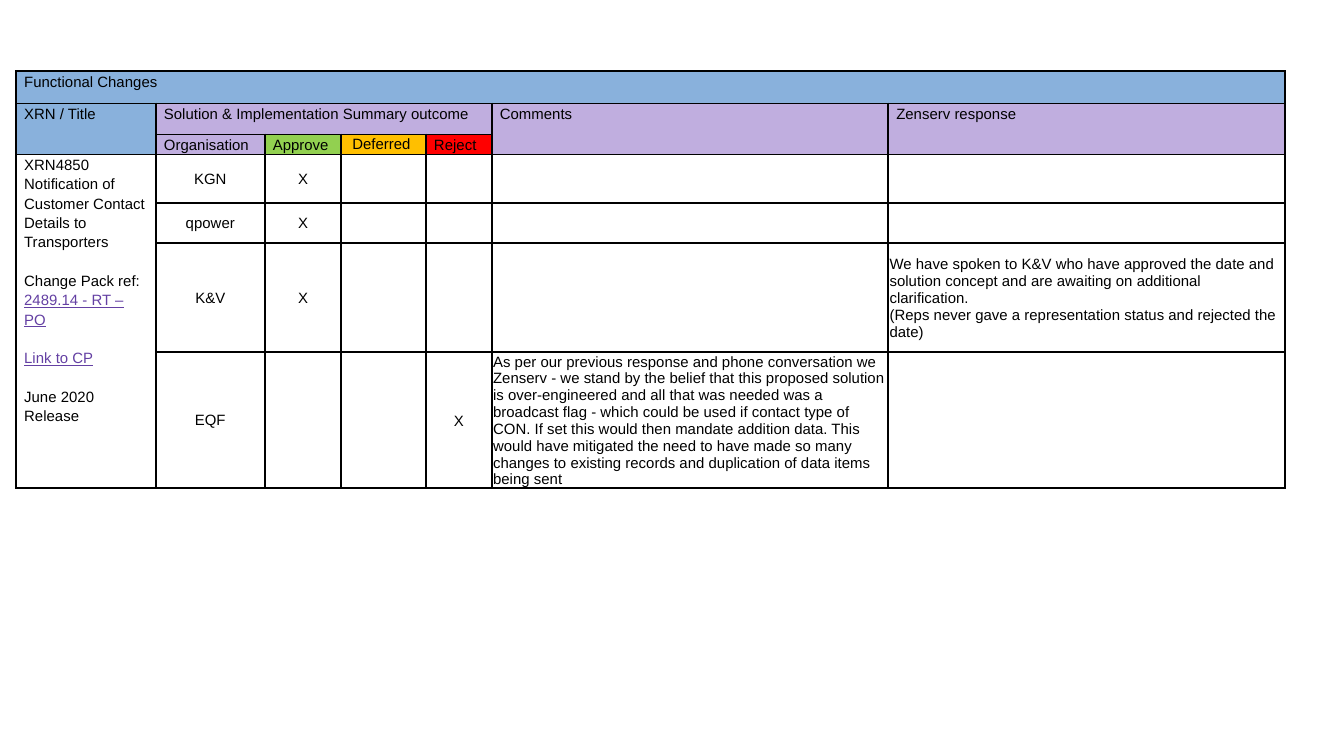
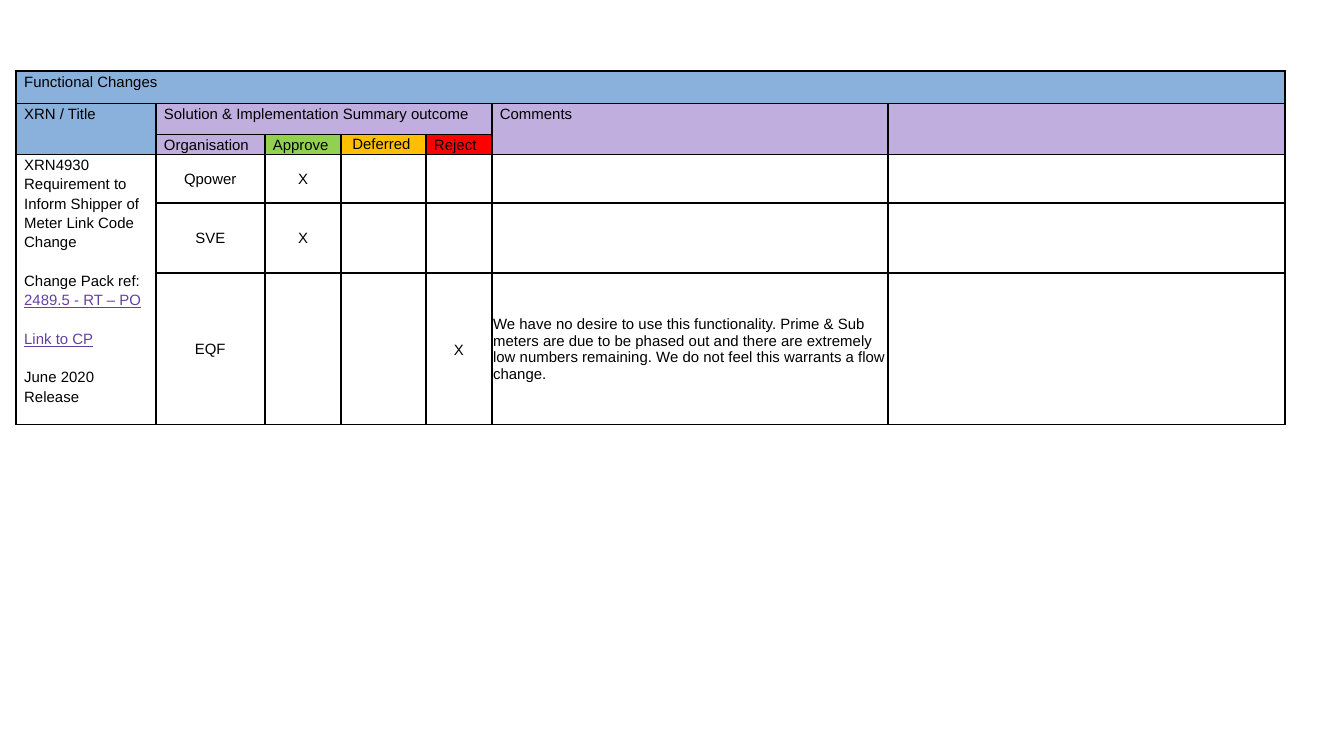
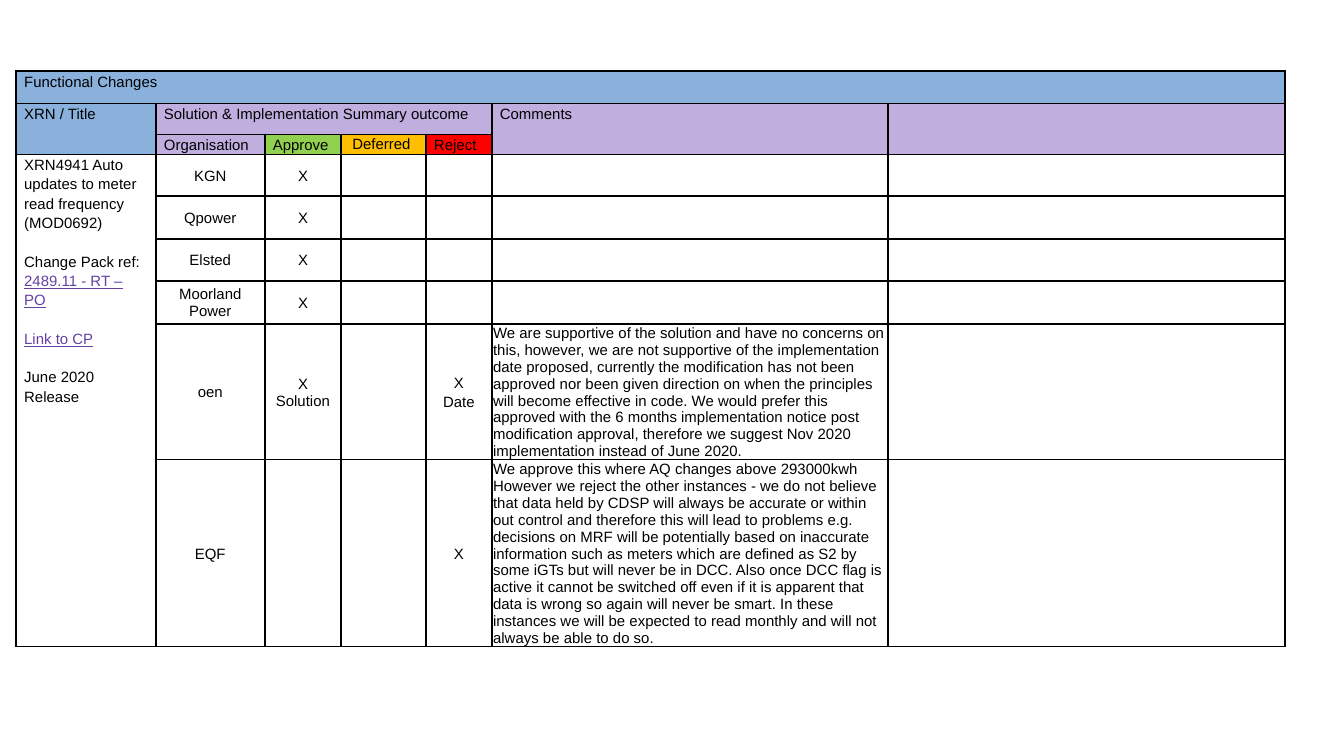
from dataclasses import dataclass
from typing import NamedTuple

from lxml import etree
from pptx import Presentation
from pptx.dml.color import RGBColor
from pptx.enum.text import MSO_ANCHOR, PP_ALIGN
from pptx.oxml.ns import qn
from pptx.util import Inches, Pt

LEFT, CENTER = PP_ALIGN.LEFT, PP_ALIGN.CENTER
TOP, MIDDLE = MSO_ANCHOR.TOP, MSO_ANCHOR.MIDDLE

SLIDE_WIDTH = 10
SLIDE_HEIGHT = SLIDE_WIDTH * 9 / 16
TABLE_LEFT, TABLE_TOP = 0.12, 0.53
COLUMN_WIDTHS = [1.04, 0.81, 0.57, 0.63, 0.49, 2.95, 2.95]
HEADER_HEIGHTS = [0.24, 0.23, 0.15]
FIRST_VOTE_ROW = len(HEADER_HEIGHTS)

BLACK, WHITE = "000000", "FFFFFF"
BLUE, PURPLE = "89B1DC", "C0AEDF"
GREEN, AMBER, RED = "92D050", "FFBF00", "FF0000"
LINK_COLOR = "6440A3"
FONT_NAME, FONT_SIZE = "Arial", 8
BORDER_WIDTH = 1
BLANK_LINE = 10.3


class CellStyle(NamedTuple):
    align: PP_ALIGN
    anchor: MSO_ANCHOR
    side_inset: float
    top_inset: float
    line_spacing: float


HEADING = CellStyle(LEFT, TOP, 0.06, 0, 1.15)
DEFERRED_HEADING = CellStyle(CENTER, TOP, 0.01, 0.01, 1)
VOTE = CellStyle(CENTER, MIDDLE, 0.01, 0.01, 1)
REJECT_VOTE = CellStyle(CENTER, MIDDLE, 0.06, 0, 1.15)
REMARK = CellStyle(LEFT, MIDDLE, 0.01, 0.01, 1)
VOTE_ROW_STYLES = [VOTE, VOTE, VOTE, REJECT_VOTE, REMARK, REMARK]


class Heading(NamedTuple):
    row: int
    column: int
    text: str
    fill: str
    row_span: int = 1
    column_span: int = 1
    style: CellStyle = HEADING


class Vote(NamedTuple):
    height: float
    organisation: str
    approve: str = ""
    reject: str = ""
    comment: str = ""
    response: str = ""


@dataclass
class Change:
    title: str
    pack_reference: str
    votes: list[Vote]
    response_heading: str = ""


HEADINGS = [
    Heading(0, 0, "Functional Changes", BLUE, column_span=7),
    Heading(1, 0, "XRN / Title", BLUE, row_span=2),
    Heading(1, 1, "Solution & Implementation Summary outcome", PURPLE, column_span=4),
    Heading(1, 5, "Comments", PURPLE, row_span=2),
    Heading(2, 1, "Organisation", PURPLE),
    Heading(2, 2, "Approve", GREEN),
    Heading(2, 3, "Deferred ", AMBER, style=DEFERRED_HEADING),
    Heading(2, 4, "Reject", RED),
]

CHANGES = [
    Change(
        "XRN4850 Notification of Customer Contact Details to Transporters",
        "2489.14 - RT – PO",
        [
            Vote(0.36, "KGN", "X"),
            Vote(0.3, "qpower", "X"),
            Vote(0.81, "K&V", "X", response=(
                "We have spoken to K&V who have approved the date and solution concept "
                "and are awaiting on additional clarification.\n"
                "(Reps never gave a representation status and rejected the date)")),
            Vote(1.01, "EQF", reject="X", comment=(
                "As per our previous response and phone conversation we Zenserv - we stand "
                "by the belief that this proposed solution is over-engineered and all that "
                "was needed was a broadcast flag - which could be used if contact type of "
                "CON. If set this would then mandate addition data. This would have "
                "mitigated the need to have made so many changes to existing records and "
                "duplication of data items being sent")),
        ],
        response_heading="Zenserv response",
    ),
    Change(
        "XRN4930 Requirement to Inform Shipper of Meter Link Code Change",
        "2489.5 - RT – PO",
        [
            Vote(0.36, "Qpower", "X"),
            Vote(0.52, "SVE", "X"),
            Vote(1.13, "EQF", reject="X", comment=(
                "We have no desire to use this functionality. Prime & Sub meters are due to "
                "be phased out and there are extremely low numbers remaining. We do not feel "
                "this warrants a flow change.")),
        ],
    ),
    Change(
        "XRN4941 Auto updates to meter read frequency (MOD0692)",
        "2489.11 - RT – PO",
        [
            Vote(0.31, "KGN", "X"),
            Vote(0.32, "Qpower", "X"),
            Vote(0.31, "Elsted", "X"),
            Vote(0.32, "Moorland\nPower", "X"),
            Vote(1.01, "oen", "X\nSolution", "X\nDate", comment=(
                "We are supportive of the solution and have no concerns on this, however, we "
                "are not supportive of the implementation date proposed, currently the "
                "modification has not been approved nor been given direction on when the "
                "principles will become effective in code. We would prefer this approved "
                "with the 6 months implementation notice post modification approval, "
                "therefore we suggest Nov 2020 implementation instead of June 2020.")),
            Vote(1.39, "EQF", reject="X", comment=(
                "We approve this where AQ changes above 293000kwh However we reject the "
                "other instances - we do not believe that data held by CDSP will always be "
                "accurate or within out control and therefore this will lead to problems "
                "e.g. decisions on MRF will be potentially based on inaccurate information "
                "such as meters which are defined as S2 by some iGTs but will never be in "
                "DCC. Also once DCC flag is active it cannot be switched off even if it is "
                "apparent that data is wrong so again will never be smart. In these "
                "instances we will be expected to read monthly and will not always be able "
                "to do so.")),
        ],
    ),
]


def rgb(color: str) -> RGBColor:
    return RGBColor.from_string(color)


def set_borders(cell) -> None:
    properties = cell._tc.get_or_add_tcPr()
    for side in ("a:lnL", "a:lnR", "a:lnT", "a:lnB"):
        line = etree.SubElement(properties, qn(side), w=str(Pt(BORDER_WIDTH)))
        line_fill = etree.SubElement(line, qn("a:solidFill"))
        etree.SubElement(line_fill, qn("a:srgbClr"), val=BLACK)


def format_paragraph(paragraph, style: CellStyle) -> None:
    paragraph.alignment = style.align
    paragraph.line_spacing = style.line_spacing
    paragraph.font.name = FONT_NAME
    paragraph.font.size = Pt(FONT_SIZE)
    paragraph.font.color.rgb = rgb(BLACK)


def write_cell(cell, text: str, style: CellStyle, fill: str = WHITE) -> None:
    cell.vertical_anchor = style.anchor
    cell.margin_left = cell.margin_right = Inches(style.side_inset)
    cell.margin_top, cell.margin_bottom = Inches(style.top_inset), 0
    cell.fill.solid()
    cell.fill.fore_color.rgb = rgb(fill)
    cell.text = text
    for paragraph in cell.text_frame.paragraphs:
        format_paragraph(paragraph, style)


def mark_link(font) -> None:
    font.color.rgb = rgb(LINK_COLOR)
    font.underline = True


def write_title(cell, change: Change) -> None:
    lines = [change.title, "Change Pack ref: ", "Link to CP", "June 2020 Release"]
    write_cell(cell, "\n".join(lines), HEADING)
    _, reference, link, _ = paragraphs = cell.text_frame.paragraphs
    for paragraph in paragraphs[1:]:
        paragraph.space_before = Pt(BLANK_LINE)
    pack_link = reference.add_run()
    pack_link.text = change.pack_reference
    mark_link(pack_link.font)
    mark_link(link.font)


def add_change_slide(presentation, change: Change) -> None:
    slide = presentation.slides.add_slide(presentation.slide_layouts[6])
    heights = HEADER_HEIGHTS + [vote.height for vote in change.votes]
    table = slide.shapes.add_table(
        len(heights), len(COLUMN_WIDTHS), Inches(TABLE_LEFT), Inches(TABLE_TOP),
        Inches(sum(COLUMN_WIDTHS)), Inches(sum(heights))).table
    table.first_row = table.horz_banding = False
    for column, width in zip(table.columns, COLUMN_WIDTHS):
        column.width = Inches(width)
    for row, height in zip(table.rows, heights):
        row.height = Inches(height)
    for cell in table.iter_cells():
        set_borders(cell)
        write_cell(cell, "", VOTE)

    response = Heading(1, 6, change.response_heading, PURPLE, row_span=2)
    for heading in HEADINGS + [response]:
        cell = table.cell(heading.row, heading.column)
        if heading.row_span * heading.column_span > 1:
            cell.merge(table.cell(heading.row + heading.row_span - 1,
                                  heading.column + heading.column_span - 1))
        write_cell(cell, heading.text, heading.style, heading.fill)

    title_cell = table.cell(FIRST_VOTE_ROW, 0)
    title_cell.merge(table.cell(len(heights) - 1, 0))
    write_title(title_cell, change)
    for row, vote in enumerate(change.votes, FIRST_VOTE_ROW):
        texts = [vote.organisation, vote.approve, "", vote.reject,
                 vote.comment, vote.response]
        for column, (text, style) in enumerate(zip(texts, VOTE_ROW_STYLES), 1):
            write_cell(table.cell(row, column), text, style)


def main() -> None:
    presentation = Presentation()
    presentation.slide_width = Inches(SLIDE_WIDTH)
    presentation.slide_height = Inches(SLIDE_HEIGHT)
    for change in CHANGES:
        add_change_slide(presentation, change)
    presentation.save("out.pptx")


if __name__ == "__main__":
    main()
